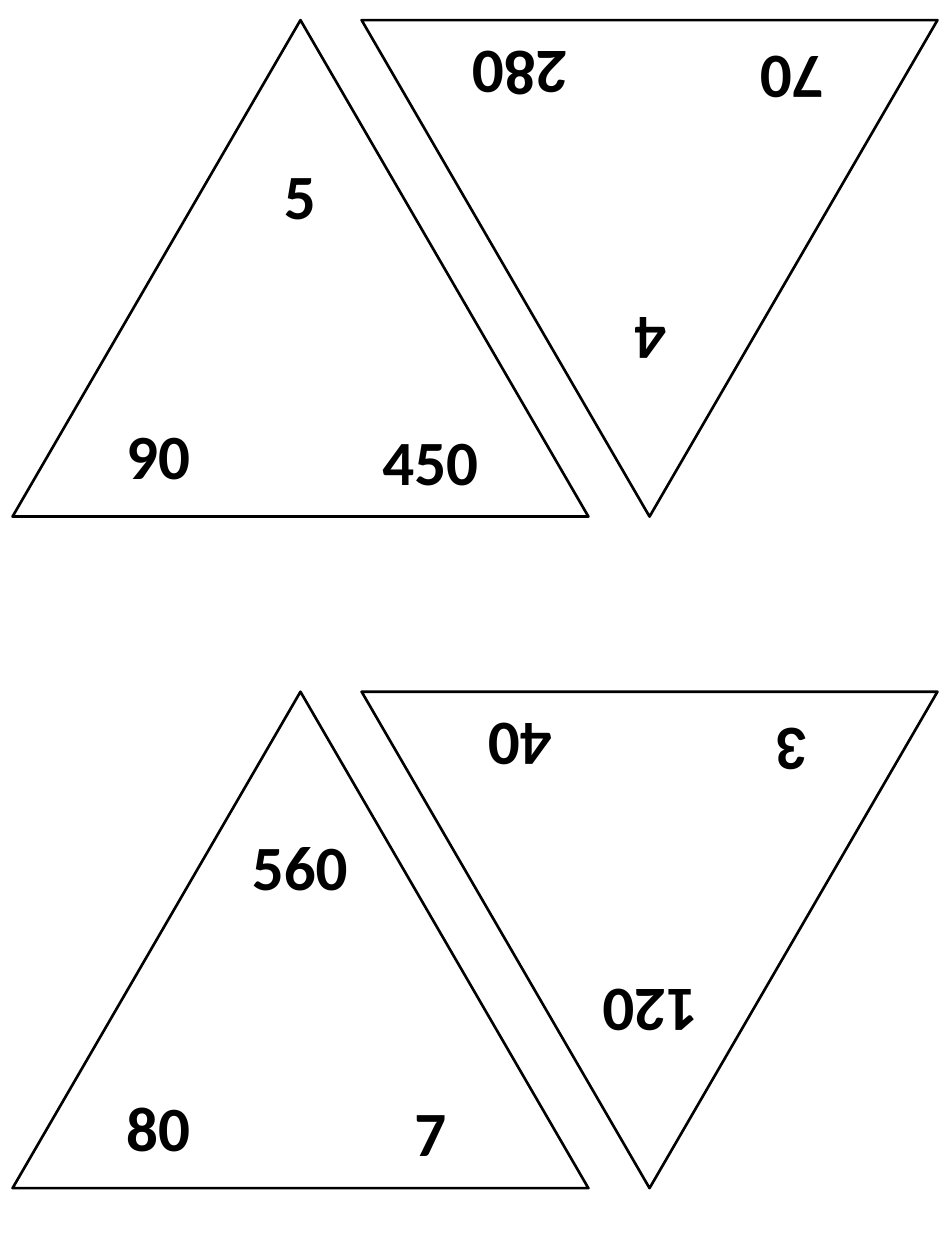
"""Build a sheet of four fact-family triangles, alternately upright and inverted."""
from dataclasses import dataclass

from pptx import Presentation
from pptx.dml.color import RGBColor
from pptx.enum.shapes import MSO_SHAPE
from pptx.enum.text import MSO_AUTO_SIZE, PP_ALIGN
from pptx.shapes.group import GroupShape
from pptx.slide import Slide
from pptx.util import Inches, Pt

BLACK = RGBColor(0x00, 0x00, 0x00)
WHITE = RGBColor(0xFF, 0xFF, 0xFF)
CARD_WIDTH, CARD_HEIGHT = 4.57, 3.94
UPRIGHT_LEFT, INVERTED_LEFT = 0.1, 2.87
FIRST_TOP, ROW_STEP = 0.16, 5.33
NUMBER_HEIGHT = 0.71
NUMBER_FORMAT = {"name": "Calibri", "size": Pt(36), "bold": True}


@dataclass(frozen=True)
class Corner:
    left: float
    top: float
    width: float


@dataclass(frozen=True)
class Card:
    row: int
    inverted: bool
    numbers: tuple[str, str, str]


CORNERS = (
    Corner(1.65, 1.03, 1.26),
    Corner(0.49, 3.1, 1.33),
    Corner(2.57, 3.14, 1.49),
)
CARDS = (
    Card(0, False, ("5", "90", "450")),
    Card(0, True, ("4", "70", "280")),
    Card(1, False, ("560", "80", "7")),
    Card(1, True, ("120", "3", "40")),
)


def draw_number(group: GroupShape, number: str, corner: Corner,
                card_left: float, card_top: float, inverted: bool) -> None:
    """Write one number in its corner, turned with the card."""
    left, top = corner.left, corner.top
    if inverted:
        left = CARD_WIDTH - left - corner.width
        top = CARD_HEIGHT - top - NUMBER_HEIGHT
    label = group.shapes.add_textbox(
        Inches(card_left + left), Inches(card_top + top),
        Inches(corner.width), Inches(NUMBER_HEIGHT))
    label.rotation = 180 if inverted else 0
    label.text_frame.word_wrap = True
    label.text_frame.auto_size = MSO_AUTO_SIZE.SHAPE_TO_FIT_TEXT
    paragraph = label.text_frame.paragraphs[0]
    paragraph.alignment = PP_ALIGN.CENTER
    run = paragraph.add_run()
    run.text = number
    for attribute, value in NUMBER_FORMAT.items():
        setattr(run.font, attribute, value)
    run.font.color.rgb = BLACK


def draw_card(slide: Slide, card: Card) -> None:
    """Draw one triangle and its three numbers as a group."""
    left = INVERTED_LEFT if card.inverted else UPRIGHT_LEFT
    top = FIRST_TOP + card.row * ROW_STEP
    group = slide.shapes.add_group_shape()
    triangle = group.shapes.add_shape(
        MSO_SHAPE.ISOSCELES_TRIANGLE, Inches(left), Inches(top),
        Inches(CARD_WIDTH), Inches(CARD_HEIGHT))
    triangle.rotation = 180 if card.inverted else 0
    triangle.shadow.inherit = False
    triangle.fill.solid()
    triangle.fill.fore_color.rgb = WHITE
    triangle.line.color.rgb = BLACK
    triangle.line.width = Pt(1.5)
    for number, corner in zip(card.numbers, CORNERS):
        draw_number(group, number, corner, left, top, card.inverted)


def main() -> None:
    """Lay out all cards on one portrait slide."""
    presentation = Presentation()
    presentation.slide_width = Inches(7.5)
    presentation.slide_height = Inches(10)
    slide = presentation.slides.add_slide(presentation.slide_layouts[6])
    for card in CARDS:
        draw_card(slide, card)
    presentation.save("out.pptx")


if __name__ == "__main__":
    main()
